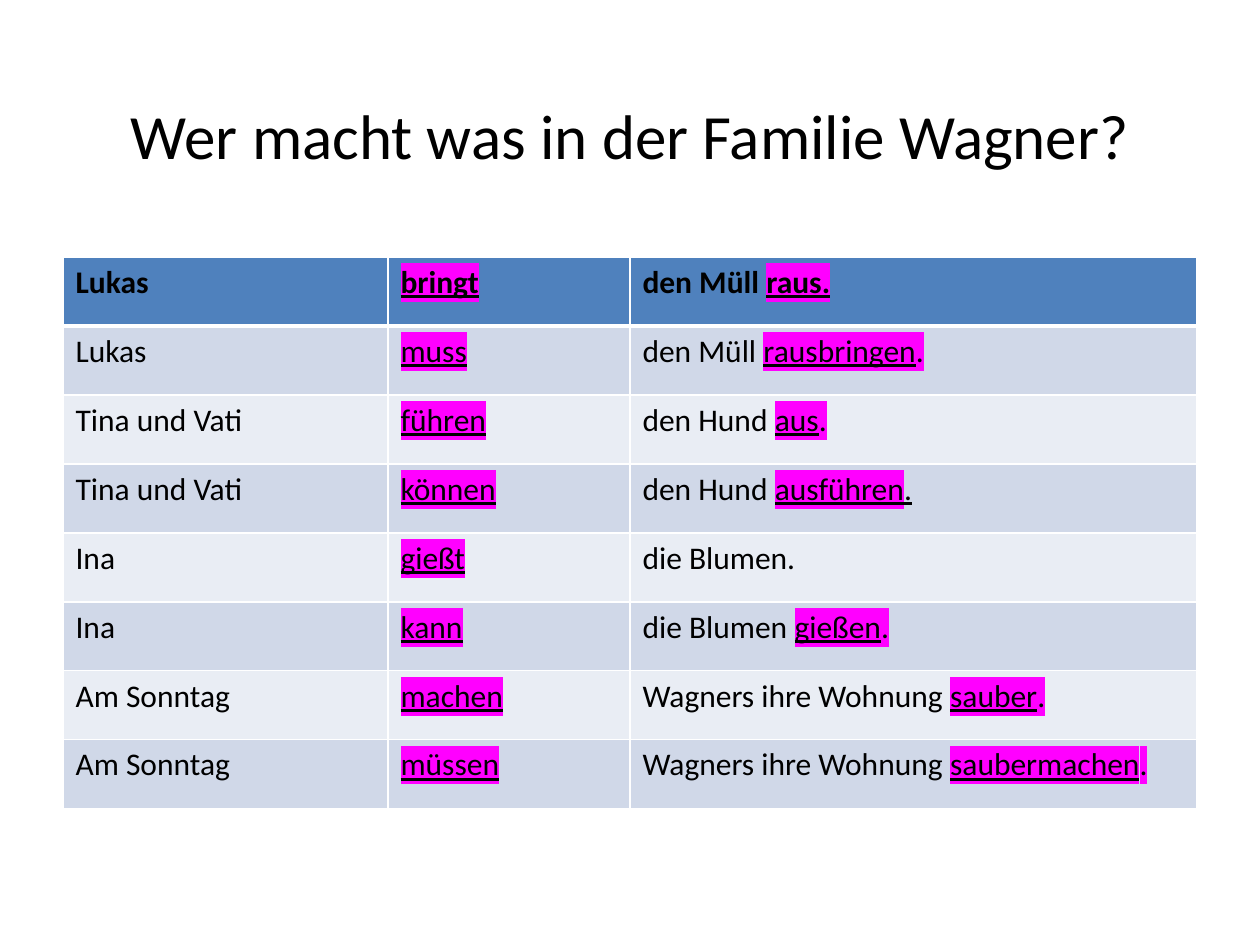
from lxml import etree
from pptx import Presentation
from pptx import util as u
from pptx.dml.color import RGBColor
from pptx.enum import text
from pptx.oxml.ns import qn

TITLE = "Wer macht was in der Familie Wagner?"

# Text styles: plain, highlighted, underlined, or both
PLAIN, MARK, LINE, BOTH = "", "m", "l", "ml"

# Subject, verb, then the runs of the last column
ROWS = [
    ("Lukas", "bringt", [("den Müll ", PLAIN), ("raus.", BOTH)]),
    ("Lukas", "muss", [("den Müll ", PLAIN), ("rausbringen", BOTH), (".", MARK)]),
    ("Tina und Vati", "führen", [("den Hund ", PLAIN), ("aus", BOTH), (".", MARK)]),
    ("Tina und Vati", "können", [("den Hund ", PLAIN), ("ausführen", BOTH), (".", LINE)]),
    ("Ina", "gießt", [("die Blumen.", PLAIN)]),
    ("Ina", "kann", [("die Blumen ", PLAIN), ("gießen", BOTH), (".", MARK)]),
    ("Am Sonntag", "machen",
     [("Wagners ihre Wohnung ", PLAIN), ("sauber", BOTH), (".", MARK)]),
    ("Am Sonntag", "müssen",
     [("Wagners ihre Wohnung ", PLAIN), ("saubermachen", BOTH), (".", MARK)]),
]

FONT = "Calibri"
BLACK = RGBColor(0x00, 0x00, 0x00)
WHITE = RGBColor(0xFF, 0xFF, 0xFF)
MAGENTA = RGBColor(0xFF, 0x00, 0xFF)
HEADER_FILL = RGBColor(0x4F, 0x81, 0xBD)
BAND_FILLS = (RGBColor(0xE9, 0xED, 0xF4), RGBColor(0xD0, 0xD8, 0xE8))

SLIDE_SIZE = (1260, 945)
TITLE_BOX = (63, 73, 1134, 122)
TABLE_LEFT, TABLE_TOP = 63, 257
COLUMN_WIDTHS = (325, 242, 567)
ROW_HEIGHT = 69


def px(value):
    return u.Emu(round(value * 914400 / 126))


def add_run(paragraph, words, size, bold=False, style=PLAIN):
    run = paragraph.add_run()
    run.text = words
    font = run.font
    font.name, font.size, font.bold = FONT, u.Pt(size), bold
    font.color.rgb = BLACK
    font.underline = LINE in style and style != PLAIN
    if MARK in style:
        properties = run._r.get_or_add_rPr()
        highlight = etree.Element(qn("a:highlight"))
        etree.SubElement(highlight, qn("a:srgbClr"), val=str(MAGENTA))
        properties.find(qn("a:solidFill")).addnext(highlight)


def set_borders(cell, widths):
    """Draw white borders; widths in points for left, right, top, bottom."""
    properties = cell._tc.get_or_add_tcPr()
    for index, (side, width) in enumerate(zip("LRTB", widths)):
        border = etree.Element(qn(f"a:ln{side}"), w=str(u.Pt(width)))
        fill = etree.SubElement(border, qn("a:solidFill"))
        etree.SubElement(fill, qn("a:srgbClr"), val=str(WHITE))
        properties.insert(index, border)


def add_title(slide):
    frame = slide.shapes.add_textbox(*map(px, TITLE_BOX)).text_frame
    frame.word_wrap = True
    frame.vertical_anchor = text.MSO_ANCHOR.MIDDLE
    paragraph = frame.paragraphs[0]
    paragraph.alignment = text.PP_ALIGN.CENTER
    add_run(paragraph, TITLE, 36)


def add_sentence_table(slide):
    table = slide.shapes.add_table(
        len(ROWS), len(COLUMN_WIDTHS), px(TABLE_LEFT), px(TABLE_TOP),
        px(sum(COLUMN_WIDTHS)), px(ROW_HEIGHT * len(ROWS))).table
    for column, width in zip(table.columns, COLUMN_WIDTHS):
        column.width = px(width)
    for row_index, (subject, verb, ending) in enumerate(ROWS):
        table.rows[row_index].height = px(ROW_HEIGHT)
        is_header = row_index == 0
        contents = ([(subject, PLAIN)], [(verb, BOTH)], ending)
        for column_index, runs in enumerate(contents):
            cell = table.cell(row_index, column_index)
            cell.fill.solid()
            cell.fill.fore_color.rgb = (
                HEADER_FILL if is_header else BAND_FILLS[row_index % 2])
            set_borders(cell, (1, 1, 3 if row_index == 1 else 1, 3 if is_header else 1))
            for words, style in runs:
                add_run(cell.text_frame.paragraphs[0], words, 18, is_header, style)


def main():
    presentation = Presentation()
    presentation.slide_width, presentation.slide_height = map(px, SLIDE_SIZE)
    slide = presentation.slides.add_slide(presentation.slide_layouts[6])
    add_title(slide)
    add_sentence_table(slide)
    presentation.save("out.pptx")


if __name__ == "__main__":
    main()
